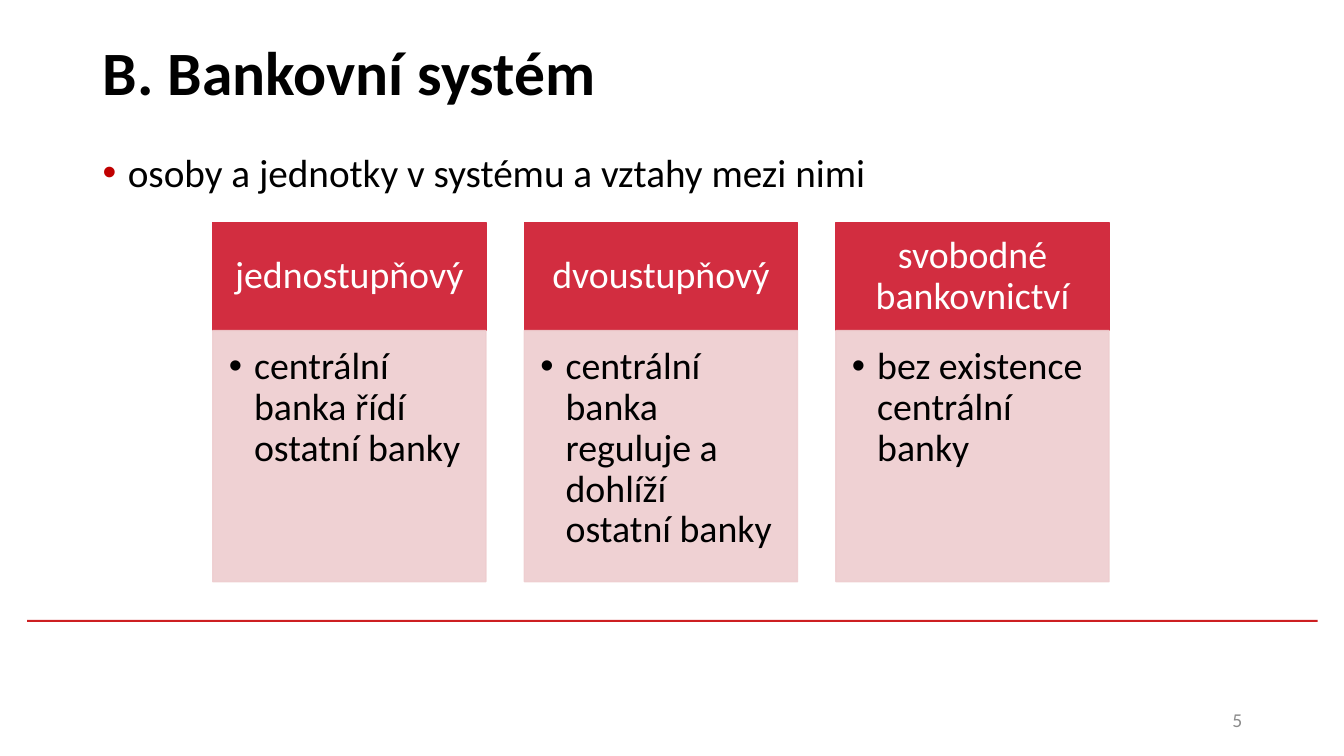
from lxml.etree import SubElement
from pptx import Presentation
from pptx.dml.color import RGBColor
from pptx.enum.shapes import MSO_SHAPE
from pptx.enum.text import MSO_ANCHOR, PP_ALIGN
from pptx.oxml.ns import qn
from pptx.util import Inches, Pt

BLACK = RGBColor(0x00, 0x00, 0x00)
WHITE = RGBColor(0xFF, 0xFF, 0xFF)
GREY = RGBColor(0x8C, 0x8C, 0x8C)
RED = RGBColor(0xD2, 0x2D, 0x40)
PINK = RGBColor(0xEE, 0xCD, 0xCF)
RULE = RGBColor(0xCD, 0x1F, 0x21)
DOT = RGBColor(0xC0, 0x00, 0x00)

SYSTEMS = [
    ("jednostupňový", "centrální banka řídí ostatní banky"),
    ("dvoustupňový", "centrální banka reguluje a dohlíží ostatní banky"),
    ("svobodné bankovnictví", "bez existence centrální banky"),
]


def add_bullet(para, color):
    props = para._p.get_or_add_pPr()
    props.set("marL", str(Inches(0.25)))
    props.set("indent", str(-Inches(0.25)))
    tint = SubElement(SubElement(props, qn("a:buClr")), qn("a:srgbClr"))
    tint.set("val", str(color))
    SubElement(props, qn("a:buFont")).set("typeface", "Arial")
    SubElement(props, qn("a:buChar")).set("char", "•")


def set_text(shape, text, size, color=BLACK, bold=False, align=PP_ALIGN.LEFT,
             anchor=MSO_ANCHOR.TOP, insets=(0.1, 0.05, 0.1, 0.05), bullet=None):
    frame = shape.text_frame
    frame.word_wrap = True
    frame.vertical_anchor = anchor
    left, top, right, bottom = map(Inches, insets)
    frame.margin_left, frame.margin_top = left, top
    frame.margin_right, frame.margin_bottom = right, bottom
    para = frame.paragraphs[0]
    para.alignment = align
    para.line_spacing = 0.9
    if bullet is not None:
        add_bullet(para, bullet)
    run = para.add_run()
    run.text = text
    run.font.name = "Calibri"
    run.font.size = Pt(size)
    run.font.bold = bold
    run.font.color.rgb = color


def add_label(slide, box, text, size, **style):
    shape = slide.shapes.add_textbox(*map(Inches, box))
    set_text(shape, text, size, **style)


def add_panel(slide, box, color, alpha=None, line=True):
    shape = slide.shapes.add_shape(MSO_SHAPE.RECTANGLE, *map(Inches, box))
    shape.shadow.inherit = False
    shape.fill.solid()
    shape.fill.fore_color.rgb = color
    if line:
        shape.line.color.rgb = color
        shape.line.width = Pt(1)
    else:
        shape.line.fill.background()
    if alpha:
        for tint in shape._element.spPr.iter(qn("a:srgbClr")):
            SubElement(tint, qn("a:alpha")).set("val", str(alpha * 1000))
    return shape


def add_column(slide, box, title, detail):
    left, top, width, height = box
    head = 1.07
    panel = add_panel(slide, (left, top, width, head), RED)
    set_text(panel, title, 27, color=WHITE, align=PP_ALIGN.CENTER,
             anchor=MSO_ANCHOR.MIDDLE, insets=(0.21, 0.12, 0.21, 0.12))
    panel = add_panel(slide, (left, top + head, width, height - head), PINK, alpha=90)
    set_text(panel, detail, 27, insets=(0.16, 0.16, 0.21, 0.24), bullet=BLACK)


def add_columns(slide, box):
    left, top, width, height = box
    wide = 2.71
    step = (width - wide) / (len(SYSTEMS) - 1)
    for index, (title, detail) in enumerate(SYSTEMS):
        add_column(slide, (left + index * step, top, wide, height), title, detail)


def add_header(slide, box):
    left, top, width, height = box
    add_label(slide, (left, top, width, 1.45), "B. Bankovní systém", 44,
              bold=True, anchor=MSO_ANCHOR.MIDDLE)
    add_label(slide, (left, top + 1.45, width, height - 1.45),
              "osoby a jednotky v systému a vztahy mezi nimi", 28, bullet=DOT)


def add_footer(slide, box):
    left, top, width, height = box
    add_panel(slide, (left, top, width, 0.02), RULE, line=False)
    add_label(slide, (left + 9.15, top + height - 0.4, 3, 0.4), "5", 14,
              color=GREY, align=PP_ALIGN.RIGHT, anchor=MSO_ANCHOR.MIDDLE)


def main():
    deck = Presentation()
    deck.slide_width = Inches(13.33)
    deck.slide_height = Inches(7.5)
    slide = deck.slides.add_slide(deck.slide_layouts[6])
    add_footer(slide, (0.27, 6.15, 12.8, 1.2))
    add_header(slide, (0.92, 0.02, 11.5, 2.1))
    add_columns(slide, (2.11, 2.21, 8.89, 3.56))
    deck.save("out.pptx")


if __name__ == "__main__":
    main()
